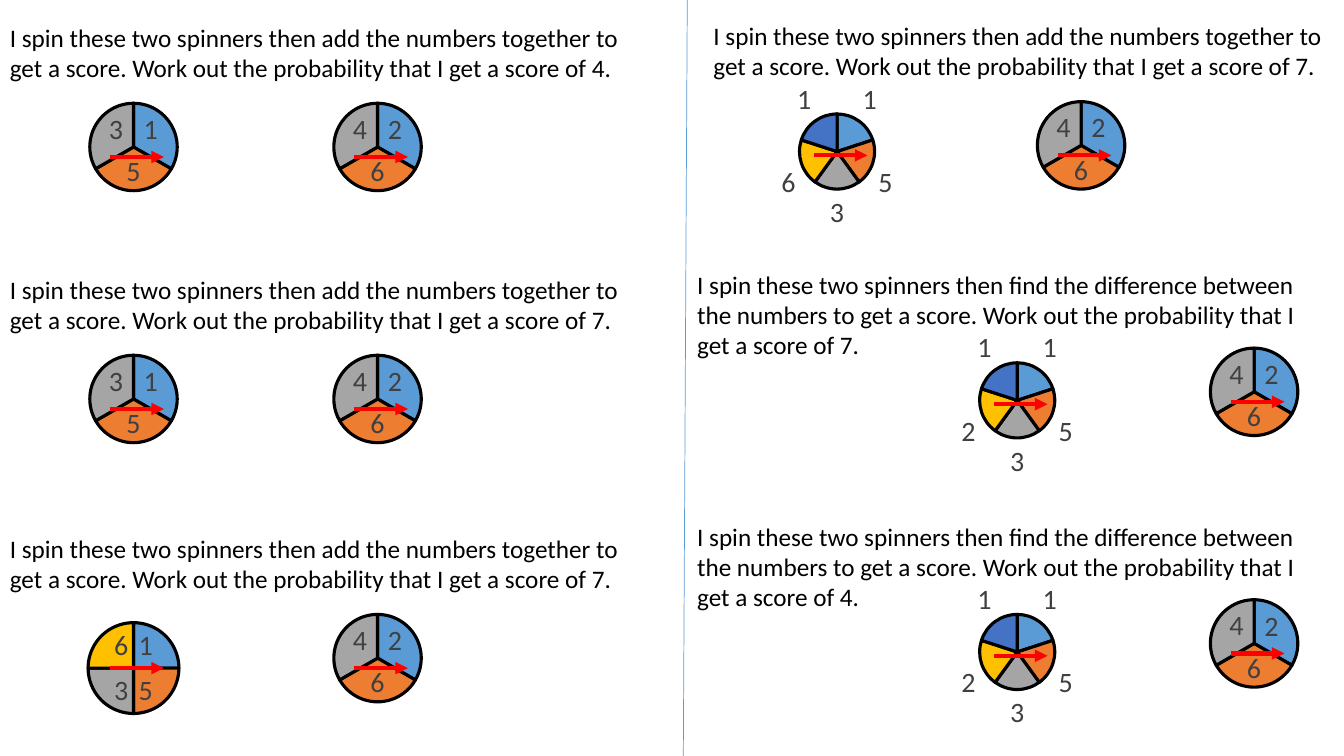
from pptx import Presentation
from pptx.chart import data as cd
from pptx.dml import color
from pptx.enum import chart as ec, shapes, text
from pptx.oxml import ns
from pptx.util import Cm, Pt
from lxml import etree

# Content: left, top, task, goal, numbers on the first spinner, spinner offsets
FONT = "Calibri"
ADD = "add the numbers together"
DIFF = "find the difference between the numbers"
EVEN = ["2", "6", "4"]
ADD_SPOTS = [(0, 1.3), (6.15, 1.3)]
DIFF_SPOTS = [(4.95, 1.3), (10.92, 1.24)]
QUESTIONS = [
    (0, 0.43, ADD, 4, ["1", "5", "3"], ADD_SPOTS),
    (0, 6.78, ADD, 7, ["1", "5", "3"], ADD_SPOTS),
    (0, 13.31, ADD, 7, ["1", "5", "3", "6"], ADD_SPOTS),
    (17.73, 0.39, ADD, 7, ["1", "5", "3", "6", "1"], ADD_SPOTS),
    (17.32, 6.66, DIFF, 7, ["1", "5", "3", "2", "1"], DIFF_SPOTS),
    (17.32, 13.0, DIFF, 4, ["1", "5", "3", "2", "1"], DIFF_SPOTS),
]
SECTORS = ["5B9BD5", "ED7D31", "A5A5A5", "FFC000", "4472C4"]
SHARES = {3: 33, 4: 25, 5: 20}
TEXT_W = 16.13
CHART_W, CHART_H = 6.73, 4.45
ARROW_X, ARROW_LEN = 2.78, 1.35

prs = Presentation()
prs.slide_width, prs.slide_height = Cm(33.87), Cm(19.05)
s = prs.slides.add_slide(prs.slide_layouts[6])


def rgb(value):
    return color.RGBColor.from_string(value)


def style_font(font, size, value):
    font.name, font.size = FONT, Pt(size)
    font.color.rgb = rgb(value)


def add_line(x1, y1, x2, y2, value, width, arrow=False):
    line = s.shapes.add_connector(shapes.MSO_CONNECTOR.STRAIGHT,
                                  Cm(x1), Cm(y1), Cm(x2), Cm(y2))
    line.line.color.rgb = rgb(value)
    line.line.width = Pt(width)
    if arrow:
        ln = line.line._get_or_add_ln()
        etree.SubElement(ln, ns.qn("a:tailEnd"), type="triangle")
    etree.SubElement(line._element.spPr, ns.qn("a:effectLst"))


def add_question(x, y, task, goal):
    height = 1.8 if task == ADD else 2.57
    tf = s.shapes.add_textbox(Cm(x), Cm(y), Cm(TEXT_W), Cm(height)).text_frame
    tf.word_wrap = True
    tf.auto_size = text.MSO_AUTO_SIZE.SHAPE_TO_FIT_TEXT
    r = tf.paragraphs[0].add_run()
    r.text = (f"I spin these two spinners then {task} to get a score. "
              f"Work out the probability that I get a score of {goal}.")
    style_font(r.font, 18, "000000")


def add_spinner(x, y, numbers):
    data = cd.CategoryChartData()
    data.categories = numbers + [""]
    data.add_series("Series 1", [SHARES[len(numbers)]] * len(numbers) + [None])
    chart = s.shapes.add_chart(ec.XL_CHART_TYPE.PIE, Cm(x), Cm(y),
                               Cm(CHART_W), Cm(CHART_H), data).chart
    chart.has_legend = chart.has_title = False
    style_font(chart.font, 10, "000000")
    plot = chart.plots[0]
    plot.vary_by_categories = True
    for i in range(len(numbers)):
        fmt = plot.series[0].points[i].format
        fmt.fill.solid()
        fmt.fill.fore_color.rgb = rgb(SECTORS[i])
        fmt.line.color.rgb = rgb("000000")
        fmt.line.width = Pt(2.25)
    labels = plot.series[0].data_labels
    labels.show_category_name = True
    labels.show_value = labels.show_percentage = False
    labels.position = ec.XL_LABEL_POSITION.BEST_FIT
    style_font(labels.font, 20, "404040")
    # Pointer across the middle of the spinner
    mid = y + CHART_H / 2
    add_line(x + ARROW_X, mid, x + ARROW_X + ARROW_LEN, mid, "FF0000", 3, True)


# Divider between the two columns
add_line(17.32, 0, 17.22, 19.05, "5B9BD5", 0.5)

# Questions with their two spinners
for left, top, task, goal, first, spots in QUESTIONS:
    add_question(left, top, task, goal)
    for (dx, dy), numbers in zip(spots, (first, EVEN)):
        add_spinner(left + dx, top + dy, numbers)

prs.save("out.pptx")
